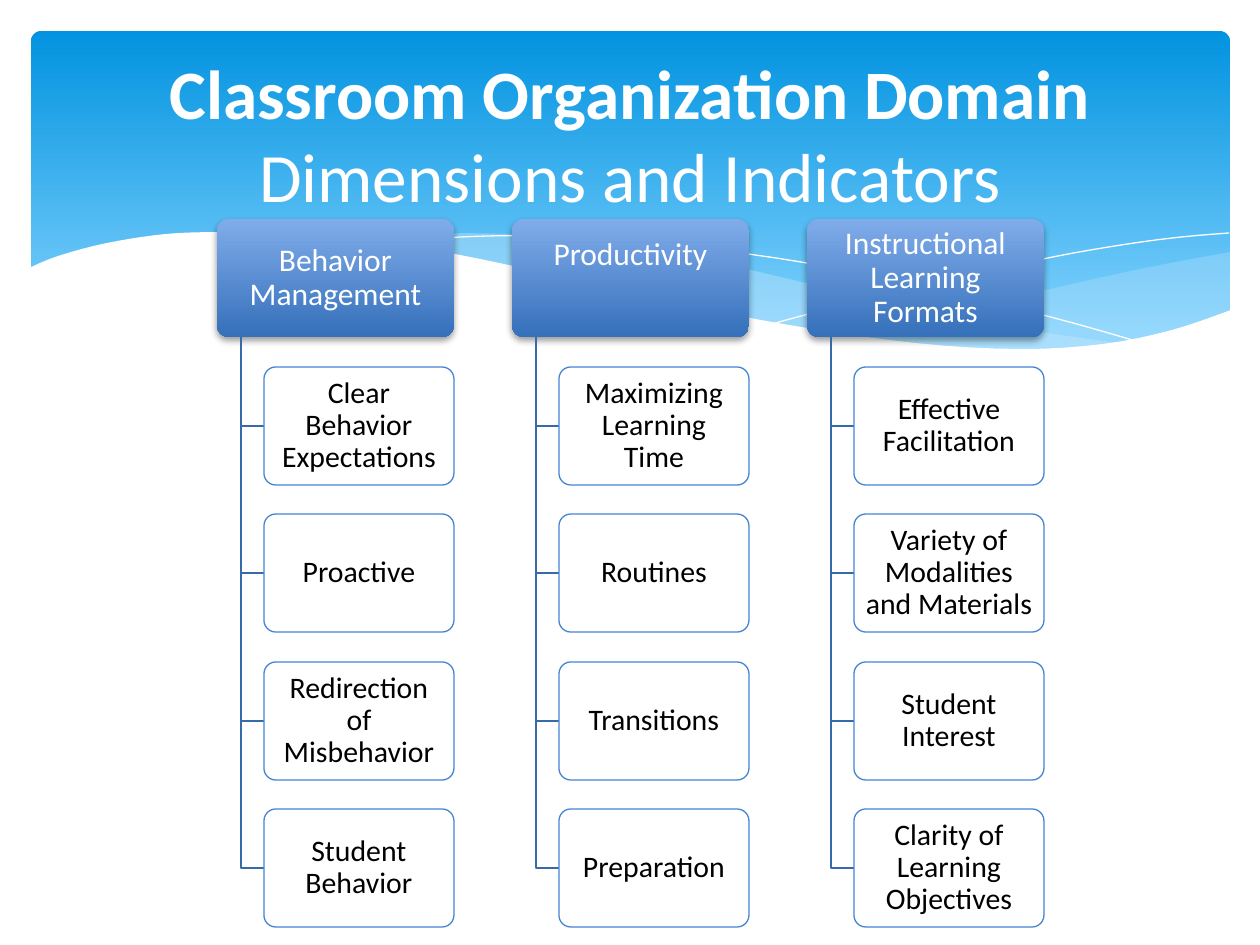
from lxml.etree import SubElement
from pptx import Presentation
from pptx.dml.color import RGBColor
from pptx.enum.shapes import MSO_SHAPE as SHAPE
from pptx.enum.text import MSO_ANCHOR as ANCHOR, PP_ALIGN as ALIGN
from pptx.oxml.ns import qn
from pptx.util import Pt

TITLE = [("Classroom Organization Domain", True), ("Dimensions and Indicators", False)]
COLUMNS = [
    ("Behavior Management", 0,
     ["Clear Behavior Expectations", "Proactive", "Redirection of Misbehavior", "Student Behavior"]),
    ("Productivity", 46,
     ["Maximizing Learning Time", "Routines", "Transitions", "Preparation"]),
    ("Instructional Learning Formats", 0,
     ["Effective Facilitation", "Variety of Modalities and Materials", "Student Interest",
      "Clarity of Learning Objectives"]),
]

WHITE = RGBColor(0xFF, 0xFF, 0xFF)
BLACK = RGBColor(0x00, 0x00, 0x00)
SKY = RGBColor(0x02, 0x93, 0xE0)
SKY_LIGHT = RGBColor(0x83, 0xD3, 0xFE)
PALE = RGBColor(0xC6, 0xE7, 0xFC)
HEAD_TOP = RGBColor(0x80, 0xAC, 0xEA)
HEAD_BOTTOM = RGBColor(0x35, 0x70, 0xBA)
BRANCH = RGBColor(0x37, 0x6A, 0xA9)
BORDER = RGBColor(0x45, 0x84, 0xD3)

PALE_RIGHT = [
    [(1230, 252), (1160, 265), (1085, 281), (982, 305), (890, 324), (833, 334)],
    [(833, 334), (906, 343), (969, 349), (1026, 350), (1087, 347), (1150, 336), (1196, 324),
     (1230, 311)],
]
PALE_LEFT = [
    [(1125, 344), (1017, 328), (890, 302), (793, 280), (717, 262), (648, 249), (586, 241),
     (503, 234), (433, 234), (360, 241)],
    [(360, 241), (431, 251), (509, 266), (619, 292), (713, 312), (799, 329), (876, 340),
     (942, 348), (1017, 350), (1068, 349), (1125, 344)],
]
THIN_LINES = [
    [(389, 246), (433, 239), (488, 236), (546, 236), (616, 239), (701, 248), (801, 262),
     (916, 285), (1047, 316), (1143, 343)],
    [(772, 324), (847, 304), (942, 281), (1053, 257), (1128, 244), (1182, 237), (1229, 233)],
]
WHITE_WAVE = [(1231, 310), (1172, 330), (1103, 344), (1019, 349), (915, 343), (789, 325),
              (667, 301), (563, 277), (460, 255), (368, 239), (290, 233), (223, 232),
              (166, 234), (107, 243), (58, 256), (29, 268)]
WAVE_BASE = [(29, 415), (1231, 415)]

PX = 914400 / 126
HEAD_X, HEAD_Y, HEAD_W, BOX_H, PITCH = 217, 219, 237, 118, 295
INDENT, STEM, FIRST_Y, INSET = 47, 24, 367, 8


def px(n):
    return round(n * PX)


def smooth(points, steps=4):
    padded = [points[0], *points, points[-1]]
    out = [points[0]]
    for a, b, c, d in zip(padded, padded[1:], padded[2:], padded[3:]):
        for k in range(1, steps + 1):
            t = k / steps
            out.append(tuple(
                (2 * q + (r - p) * t + (2 * p - 5 * q + 4 * r - s) * t ** 2
                 + (3 * q - p - 3 * r + s) * t ** 3) / 2
                for p, q, r, s in zip(a, b, c, d)))
    return out


def style(s, fill=None, alpha=None, line=None, width=0):
    s.shadow.inherit = False
    if fill is None:
        s.fill.background()
    else:
        s.fill.solid()
        s.fill.fore_color.rgb = fill
    if alpha:
        color = s._element.spPr.find(qn("a:solidFill"))[0]
        SubElement(color, qn("a:alpha"), val=str(alpha * 1000))
    if line is None:
        s.line.fill.background()
    else:
        s.line.color.rgb = line
        s.line.width = Pt(width)


def gradient(s, top, bottom, end=1):
    s.fill.gradient()
    s.fill.gradient_angle = 270
    for stop, color, position in zip(s.fill.gradient_stops, (top, bottom), (0, end)):
        stop.color.rgb = color
        stop.position = position


def free(points, closed=True, **look):
    pts = [(px(x), px(y)) for x, y in points]
    builder = slide.shapes.build_freeform(*pts[0])
    builder.add_line_segments(pts[1:], close=closed)
    style(builder.convert_to_shape(), **look)


def rounded(x, y, w, h, radius, **look):
    s = slide.shapes.add_shape(SHAPE.ROUNDED_RECTANGLE, px(x), px(y), px(w), px(h))
    s.adjustments[0] = radius
    style(s, **look)
    return s


def add_run(p, text, size, color, bold=False):
    r = p.add_run()
    r.text = text
    r.font.name, r.font.size, r.font.bold = "Calibri", Pt(size), bold
    r.font.color.rgb = color


def label(s, text, size, color, lift=0):
    tf = s.text_frame
    tf.word_wrap = True
    tf.vertical_anchor = ANCHOR.MIDDLE
    tf.margin_left = tf.margin_right = tf.margin_top = px(INSET)
    tf.margin_bottom = px(INSET + lift)
    p = tf.paragraphs[0]
    p.alignment = ALIGN.CENTER
    p.line_spacing = 0.9
    add_run(p, text, size, color)


def drop_shadow(s):
    effects = s._element.spPr.find(qn("a:effectLst"))
    shadow = SubElement(effects, qn("a:outerShdw"), blurRad=str(Pt(4)), dist=str(Pt(2)),
                        dir="5400000", rotWithShape="0")
    color = SubElement(shadow, qn("a:srgbClr"), val=str(BLACK))
    SubElement(color, qn("a:alpha"), val="38000")


prs = Presentation()
prs.slide_width, prs.slide_height = px(1260), px(945)
slide = prs.slides.add_slide(prs.slide_layouts[6])

band = rounded(31, 31, 1199, 340, 0.03)
gradient(band, SKY, SKY_LIGHT, 0.9)
for edges, alpha in ((PALE_RIGHT, 29), (PALE_LEFT, 40)):
    free([pt for edge in edges for pt in smooth(edge)], fill=PALE, alpha=alpha)
for curve in THIN_LINES:
    free(smooth(curve), closed=False, line=WHITE)
free(smooth(WHITE_WAVE) + WAVE_BASE, fill=WHITE)

for i, (heading, lift, indicators) in enumerate(COLUMNS):
    x = HEAD_X + i * PITCH
    head = rounded(x, HEAD_Y, HEAD_W, BOX_H, 0.1)
    gradient(head, HEAD_TOP, HEAD_BOTTOM)
    drop_shadow(head)
    label(head, heading, 18, WHITE, lift)
    for j, indicator in enumerate(indicators):
        y = FIRST_Y + j * PITCH // 2
        middle = y + BOX_H // 2
        free([(x + STEM, HEAD_Y + BOX_H), (x + STEM, middle), (x + INDENT, middle)],
             closed=False, line=BRANCH, width=0.75)
        box = rounded(x + INDENT, y, HEAD_W - INDENT, BOX_H, 0.1,
                      fill=WHITE, alpha=90, line=BORDER, width=0.75)
        label(box, indicator, 17, BLACK)

tf = slide.shapes.add_textbox(px(63), px(47), px(1134), px(173)).text_frame
tf.word_wrap = True
tf.vertical_anchor = ANCHOR.MIDDLE
p = tf.paragraphs[0]
p.alignment = ALIGN.CENTER
for n, (text, bold) in enumerate(TITLE):
    if n:
        p.add_line_break()
    add_run(p, text, 39.6, WHITE, bold)

prs.save("out.pptx")
